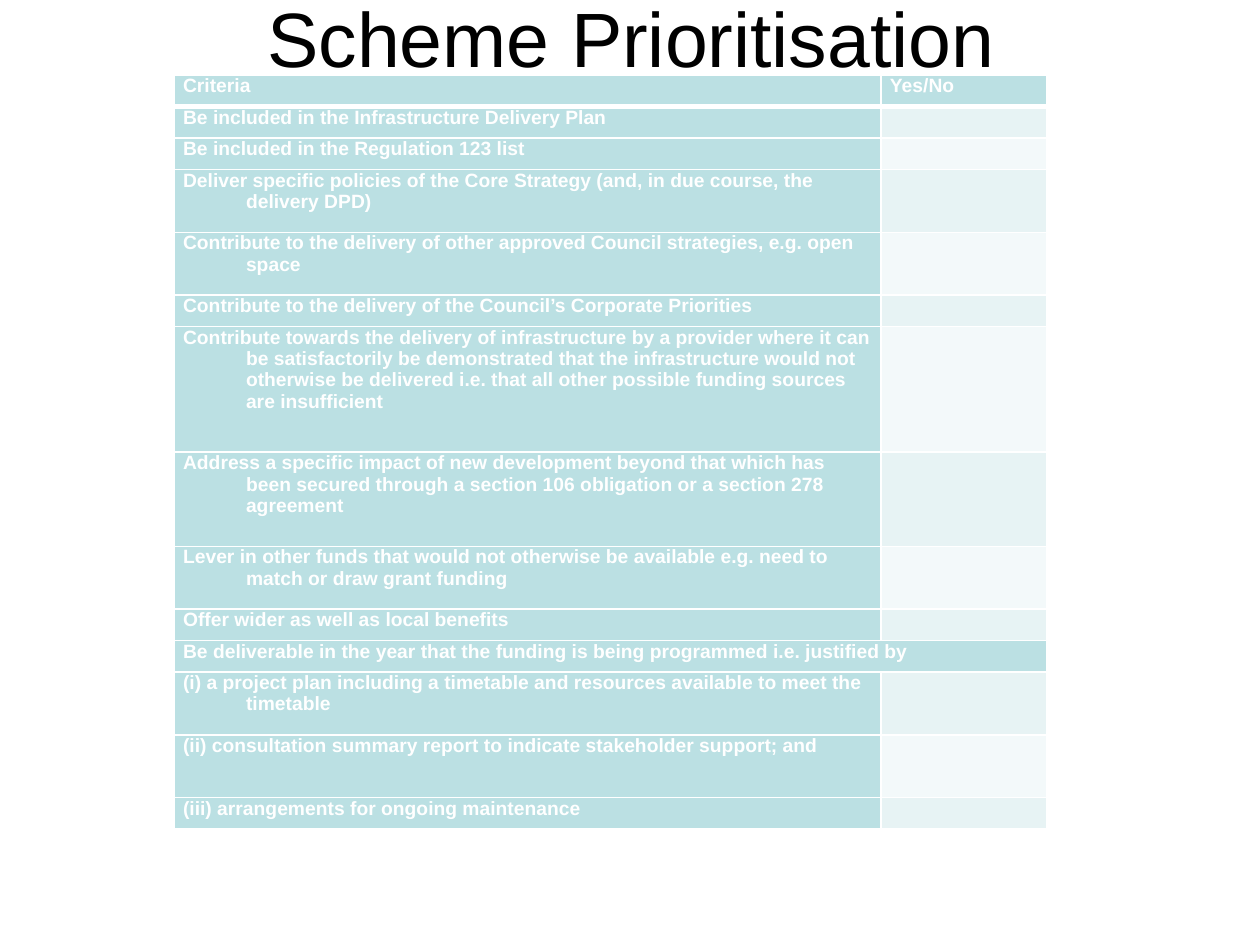
from lxml.etree import SubElement
from pptx import Presentation
from pptx.dml.color import RGBColor
from pptx.enum.text import MSO_ANCHOR, MSO_AUTO_SIZE, PP_ALIGN
from pptx.oxml.ns import qn
from pptx.util import Cm, Pt

COLORS = {
    "text": "000000",
    "white": "FFFFFF",
    "criteria": "BBE0E3",
    "odd": "E7F3F4",
    "even": "F3F9FA",
}
FONT = "Arial"
TEXT_SIZE = Pt(11)
ROW_UNIT = 0.633
ANSWER_WIDTH = 3.35
MERGED_ROW = 10
HANGING = Cm(1.27)

CRITERIA = [
    ("Criteria", 1),
    ("Be included in the Infrastructure Delivery Plan", 1),
    ("Be included in the Regulation 123 list", 1),
    ("Deliver specific policies of the Core Strategy (and, in due course, the delivery DPD)", 2),
    ("Contribute to the delivery of other approved Council strategies, e.g. open space", 2),
    ("Contribute to the delivery of the Council’s Corporate Priorities", 1),
    ("Contribute towards the delivery of infrastructure by a provider where it can "
     "be satisfactorily be demonstrated that the infrastructure would not otherwise "
     "be delivered i.e. that all other possible funding sources are insufficient", 4),
    ("Address a specific impact of new development beyond that which has been "
     "secured through a section 106 obligation or a section 278 agreement", 3),
    ("Lever in other funds that would not otherwise be available e.g. need to "
     "match or draw grant funding", 2),
    ("Offer wider as well as local benefits", 1),
    ("Be deliverable in the year that the funding is being programmed i.e. justified by", 1),
    ("(i) a project plan including a timetable and resources available to meet the timetable", 2),
    ("(ii) consultation summary report to indicate stakeholder support; and", 2),
    ("(iii) arrangements for ongoing maintenance", 1),
]


def color(name):
    return RGBColor.from_string(COLORS[name])


def add_span(para, text, size, tone, bold):
    span = para.add_run()
    span.text = text
    span.font.name = FONT
    span.font.size = size
    span.font.bold = bold
    span.font.color.rgb = color(tone)


def add_title(page, left, top, width, height):
    title = page.shapes.title
    title.left, title.top, title.width, title.height = map(Cm, (left, top, width, height))
    frame = title.text_frame
    frame.word_wrap = True
    frame.auto_size = MSO_AUTO_SIZE.NONE
    frame.vertical_anchor = MSO_ANCHOR.MIDDLE
    para = frame.paragraphs[0]
    para.alignment = PP_ALIGN.CENTER
    add_span(para, "Scheme Prioritisation", Pt(44), "text", False)


def set_borders(cell, row):
    properties = cell._tc.get_or_add_tcPr()
    widths = {"L": 1, "R": 1, "T": 3 if row == 1 else 1, "B": 3 if row == 0 else 1}
    for side, width in widths.items():
        line = SubElement(properties, qn(f"a:ln{side}"), w=str(Pt(width)))
        fill = SubElement(line, qn("a:solidFill"))
        SubElement(fill, qn("a:srgbClr"), val=COLORS["white"])


def fill_cell(cell, row, text, tone):
    cell.margin_left = cell.margin_right = Cm(0.18)
    cell.margin_top = cell.margin_bottom = 0
    set_borders(cell, row)
    cell.fill.solid()
    cell.fill.fore_color.rgb = color(tone)
    para = cell.text_frame.paragraphs[0]
    if text:
        properties = para._p.get_or_add_pPr()
        properties.set("marL", str(HANGING))
        properties.set("indent", str(-HANGING))
        add_span(para, text, TEXT_SIZE, "white", True)
    else:
        SubElement(para._p, qn("a:endParaRPr"), sz=str(int(TEXT_SIZE.pt * 100)))


def add_criteria_table(page, left, top, width):
    units = sum(count for _, count in CRITERIA)
    frame = page.shapes.add_table(
        len(CRITERIA), 2, Cm(left), Cm(top), Cm(width), Cm(units * ROW_UNIT))
    table = frame.table
    table.first_col = True
    table.columns[0].width = Cm(width - ANSWER_WIDTH)
    table.columns[1].width = Cm(ANSWER_WIDTH)
    for row, (criterion, count) in enumerate(CRITERIA):
        table.rows[row].height = Cm(count * ROW_UNIT)
        answer = "Yes/No" if row == 0 else ""
        band = "odd" if row % 2 else "even"
        answer_tone = "criteria" if row in (0, MERGED_ROW) else band
        fill_cell(table.cell(row, 0), row, criterion, "criteria")
        fill_cell(table.cell(row, 1), row, answer, answer_tone)
    table.cell(MERGED_ROW, 0).merge(table.cell(MERGED_ROW, 1))


def main():
    deck = Presentation()
    deck.slide_width, deck.slide_height = Cm(25.4), Cm(19.05)
    page = deck.slides.add_slide(deck.slide_layouts[5])
    page.background.fill.solid()
    page.background.fill.fore_color.rgb = color("white")
    add_title(page, 1.3, -0.03, 22.86, 1.55)
    add_criteria_table(page, 3.51, 1.52, 17.6)
    deck.save("out.pptx")


if __name__ == "__main__":
    main()
